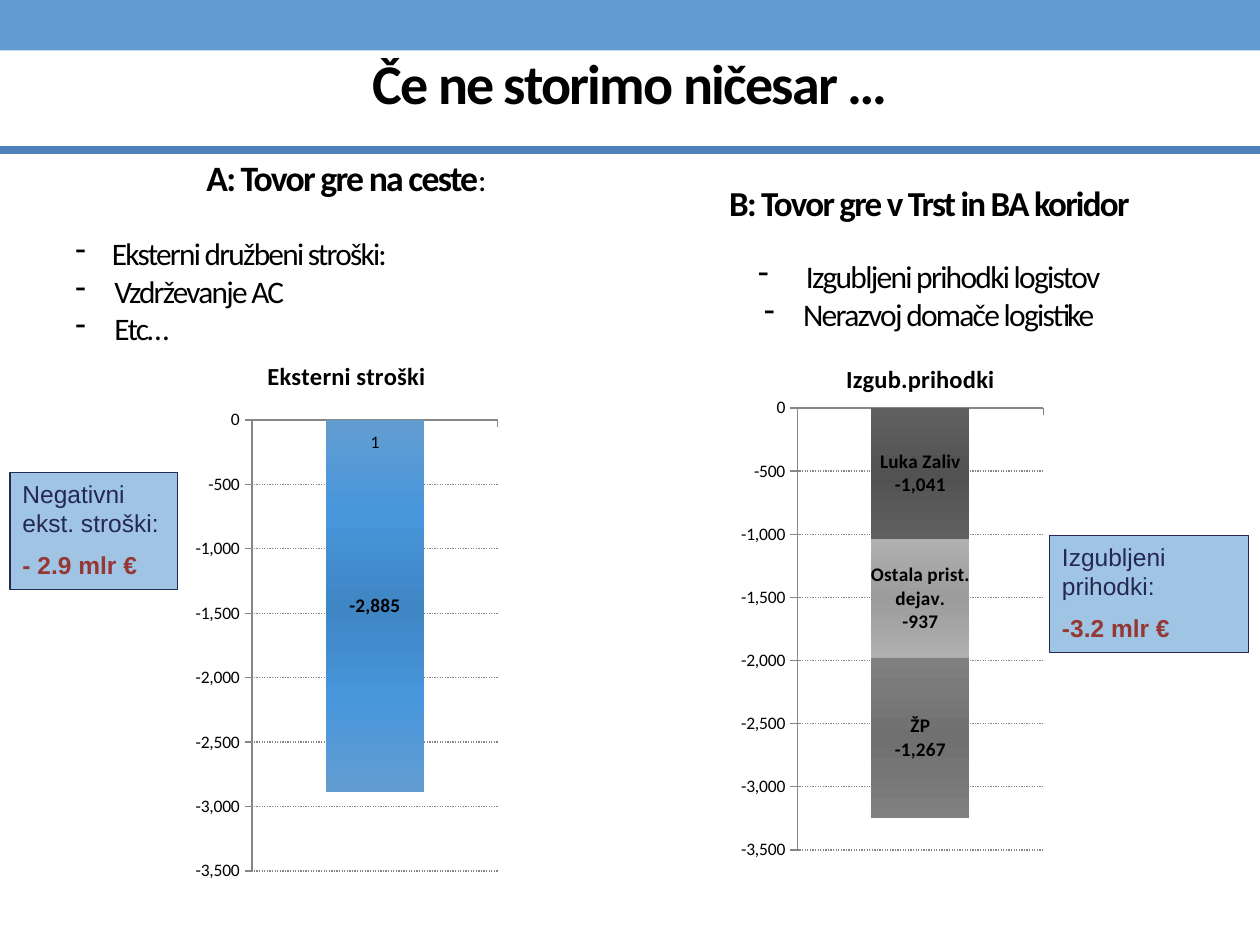
from lxml import etree
from pptx import Presentation
from pptx.chart.data import CategoryChartData
from pptx.dml.color import RGBColor
from pptx.enum.chart import XL_CHART_TYPE, XL_LABEL_POSITION, XL_TICK_LABEL_POSITION, XL_TICK_MARK
from pptx.enum.dml import MSO_LINE
from pptx.enum.shapes import MSO_CONNECTOR, MSO_SHAPE
from pptx.enum.text import MSO_ANCHOR, PP_ALIGN
from pptx.oxml import parse_xml
from pptx.oxml.ns import nsdecls, qn
from pptx.util import Inches, Pt

CLUSTERED, STACKED = XL_CHART_TYPE.COLUMN_CLUSTERED, XL_CHART_TYPE.COLUMN_STACKED
LABEL_CENTER = XL_LABEL_POSITION.CENTER
LABELS_HIGH, LABELS_NEXT = XL_TICK_LABEL_POSITION.HIGH, XL_TICK_LABEL_POSITION.NEXT_TO_AXIS
TICK_OUTSIDE = XL_TICK_MARK.OUTSIDE
DOTTED = MSO_LINE.ROUND_DOT
STRAIGHT, RECTANGLE = MSO_CONNECTOR.STRAIGHT, MSO_SHAPE.RECTANGLE
CENTER, LEFT, MIDDLE = PP_ALIGN.CENTER, PP_ALIGN.LEFT, MSO_ANCHOR.MIDDLE

BLACK, BLUE, NAVY, RED, GREY = "000000", "629DD1", "242852", "953735", "868686"
NUMBER_FORMAT = "#,##0"


def color(value):
    return RGBColor.from_string(value)


def format_font(font, size, value=BLACK, bold=False, name="Calibri"):
    font.name, font.size, font.bold = name, Pt(size), bold
    font.color.rgb = color(value)


def add_run(paragraph, text, size, bold=False):
    """Add a run of tightly spaced text."""
    run = paragraph.add_run()
    run.text = text
    format_font(run.font, size, bold=bold)
    run.font._element.set("spc", "-100")


def set_dash(paragraph, indent):
    """Give a paragraph a dash bullet with a hanging indent."""
    properties = paragraph._p.get_or_add_pPr()
    properties.set("marL", str(Inches(indent)))
    properties.set("indent", str(-Inches(indent)))
    etree.SubElement(properties, qn("a:buChar")).set("char", "-")


def set_title(slide, text):
    title = slide.shapes.title
    title.left, title.top, title.width, title.height = map(Inches, (0.5, 0.17, 9, 0.96))
    title.text_frame.vertical_anchor = MIDDLE
    paragraph = title.text_frame.paragraphs[0]
    paragraph.alignment = CENTER
    add_run(paragraph, text, 32, True)


def add_rectangle(slide, box, fill):
    shape = slide.shapes.add_shape(RECTANGLE, *map(Inches, box))
    shape.shadow.inherit = False
    shape.fill.solid()
    shape.fill.fore_color.rgb = color(fill)
    shape.line.fill.background()
    return shape


def add_rule(slide, top):
    rule = slide.shapes.add_connector(STRAIGHT, 0, Inches(top), Inches(10), Inches(top))
    rule.line.color.rgb = color("4F81BD")
    rule.line.width = Pt(4.5)
    etree.SubElement(rule._element.spPr, qn("a:effectLst"))


def add_callout(slide, box, label, amount):
    """Add a translucent box with a label and an amount in red."""
    shape = add_rectangle(slide, box, BLUE)
    fill_color = shape._element.spPr.find(qn("a:solidFill"))[0]
    etree.SubElement(fill_color, qn("a:alpha")).set("val", "60000")
    shape.line.color.rgb = color(NAVY)
    shape.line.width = Pt(0.75)
    frame = shape.text_frame
    frame.word_wrap = True
    frame.vertical_anchor = MSO_ANCHOR.TOP
    frame.text = f"{label}\n{amount}"
    for paragraph, value, bold in zip(frame.paragraphs, (NAVY, RED), (False, True)):
        paragraph.alignment = LEFT
        paragraph.space_before = Pt(7)
        format_font(paragraph.runs[0].font, 14, value, bold, "Arial")


def add_scenario(slide, box, heading, size, items, item_size, alignment, gap):
    """Add a scenario heading (a list of text and bold pairs) with its dashed items."""
    frame = slide.shapes.add_textbox(*map(Inches, box)).text_frame
    frame.word_wrap = True
    frame.vertical_anchor = MIDDLE
    paragraph = frame.paragraphs[0]
    paragraph.alignment = CENTER
    paragraph.space_after = Pt(gap)
    for text, bold in heading:
        add_run(paragraph, text, size if bold else item_size, bold)
    for text, indent in items:
        paragraph = frame.add_paragraph()
        paragraph.alignment = alignment
        set_dash(paragraph, indent)
        add_run(paragraph, text, item_size)


def set_plot_layout(chart, x, y, w, h):
    plot_area = chart._chartSpace.chart.plotArea
    for layout in plot_area.findall(qn("c:layout")):
        plot_area.remove(layout)
    sizes = "".join(f'<c:{key} val="{value}"/>' for key, value in zip("xywh", (x, y, w, h)))
    plot_area.insert(0, parse_xml(
        f'<c:layout {nsdecls("c")}><c:manualLayout><c:layoutTarget val="inner"/>'
        f'<c:xMode val="edge"/><c:yMode val="edge"/>{sizes}</c:manualLayout></c:layout>'))


def format_series(series, stops, show_name):
    """Fill the bars with a vertical gradient and label them in the middle."""
    series.format.fill.gradient()
    series.format.fill.gradient_angle = 90
    stop_list = series._element.spPr.find(qn("a:gradFill")).find(qn("a:gsLst"))
    for stop in list(stop_list):
        stop_list.remove(stop)
    for index, value in enumerate(stops):
        stop = etree.SubElement(stop_list, qn("a:gs"))
        stop.set("pos", str(100000 * index // (len(stops) - 1)))
        etree.SubElement(stop, qn("a:srgbClr")).set("val", value)
    labels = series.data_labels
    labels.show_value = True
    labels.show_series_name = show_name
    labels.number_format, labels.number_format_is_linked = NUMBER_FORMAT, False
    labels.position = LABEL_CENTER
    format_font(labels.font, 11, bold=True)
    if show_name:
        separator = etree.Element(qn("c:separator"))
        separator.text = "\n"
        labels._element.find(qn("c:showBubbleSize")).addnext(separator)


def add_column_chart(slide, kind, box, layout, category, series_rows, title=None):
    data = CategoryChartData(number_format=NUMBER_FORMAT)
    data.categories = [category]
    for name, value, _ in series_rows:
        data.add_series(name, [value])
    chart = slide.shapes.add_chart(kind, *map(Inches, box), data).chart
    format_font(chart.font, 10)
    chart.has_legend = False
    chart.has_title = title is not None
    if title:
        chart.chart_title.text_frame.text = title
        format_font(chart.chart_title.text_frame.paragraphs[0].runs[0].font, 14, bold=True)

    # Axes
    category_axis, value_axis = chart.category_axis, chart.value_axis
    for axis in (category_axis, value_axis):
        axis.major_tick_mark = TICK_OUTSIDE
        axis.format.line.color.rgb = color(GREY)
    category_axis.tick_label_position = LABELS_NEXT if title else LABELS_HIGH
    format_font(category_axis.tick_labels.font, 10 if title else 14, bold=not title)
    value_axis.minimum_scale, value_axis.maximum_scale = -3500, 0
    value_axis.major_unit = 500
    value_axis.tick_labels.number_format = NUMBER_FORMAT
    value_axis.tick_labels.number_format_is_linked = False
    gridline = value_axis.major_gridlines.format.line
    gridline.color.rgb = color(GREY)
    gridline.width, gridline.dash_style = Pt(0.75), DOTTED

    # Bars
    plot = chart.plots[0]
    plot.gap_width, plot.vary_by_categories = 150, False
    plot.overlap = 100 if kind == STACKED else 0
    for series, (_, _, stops) in zip(plot.series, series_rows):
        series.invert_if_negative = False
        format_series(series, stops, kind == STACKED)
    set_plot_layout(chart, *layout)


def main():
    presentation = Presentation()
    presentation.slide_width, presentation.slide_height = Inches(10), Inches(7.5)
    slide = presentation.slides.add_slide(presentation.slide_layouts[5])

    # Header
    add_rectangle(slide, (0, 0, 10, 0.4), BLUE)
    add_rule(slide, 1.19)
    set_title(slide, "Če ne storimo ničesar …")

    # Totals
    add_callout(slide, (0.08, 3.75, 1.33, 0.93), "Negativni ekst. stroški:", "- 2.9 mlr €")
    add_callout(slide, (8.33, 4.25, 1.58, 0.93), "Izgubljeni prihodki:", "-3.2 mlr €")

    # Scenarios
    add_scenario(slide, (0.5, 1.33, 4.5, 1.33), [("A: Tovor gre na ceste", True), (":", False)], 20.4,
                 [("Eksterni družbeni stroški:", 0.29), ("Vzdrževanje AC", 0.31), ("Etc…", 0.31)],
                 17.9, LEFT, 20.5)
    add_scenario(slide, (5, 1.33, 4.75, 1.42), [("B: Tovor gre v Trst in BA koridor", True)], 20,
                 [("Izgubljeni prihodki logistov", 0.38), ("Nerazvoj domače logistike", 0.31)],
                 18, CENTER, 19.5)

    # Charts
    add_column_chart(slide, CLUSTERED, (1.5, 2.67, 2.5, 4.42), (0.2, 0.15, 0.78, 0.81), "1",
                     [("Eksterni stroški", -2885, (BLUE, "4896DC", "3F86C4", "4896DC", BLUE))],
                     "Eksterni stroški")
    add_column_chart(slide, STACKED, (5.83, 2.83, 2.5, 4.08), (0.2, 0.1, 0.78, 0.86), "Izgub.prihodki",
                     [("Luka Zaliv", -1041, ("606060", "525252", "606060")),
                      ("Ostala prist. dejav.", -937, ("B0B0B0", "9C9C9C", "B0B0B0")),
                      ("ŽP", -1267, ("808080", "707070", "808080"))])

    presentation.save("out.pptx")


if __name__ == "__main__":
    main()
